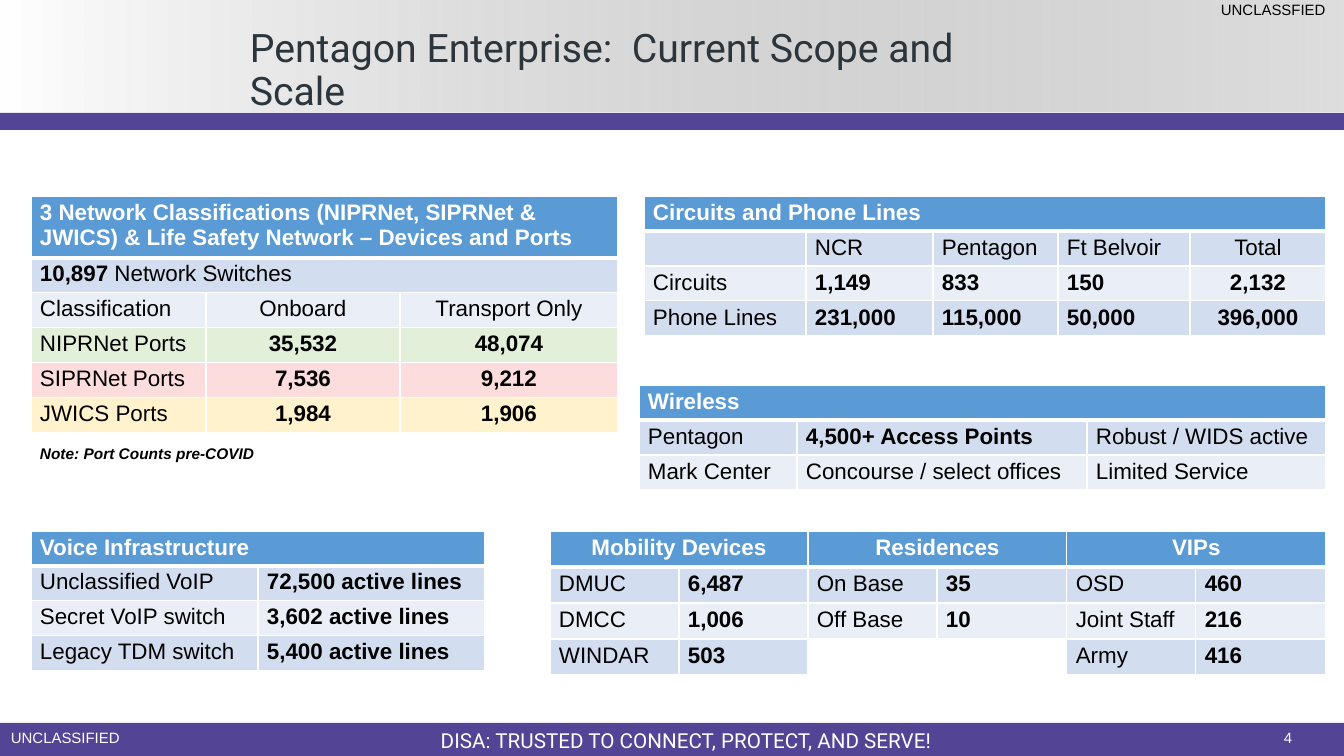
from lxml.etree import SubElement
from pptx import Presentation
from pptx.dml.color import RGBColor
from pptx.enum.shapes import MSO_SHAPE as Shape
from pptx.enum.text import MSO_ANCHOR as Anchor, PP_ALIGN as Align
from pptx.oxml.ns import qn
from pptx.util import Emu, Pt

SCALE = 914400 / 100.8
WHITE = RGBColor(0xFF, 0xFF, 0xFF)
BLACK = RGBColor(0x00, 0x00, 0x00)
GRAY = RGBColor(0x80, 0x80, 0x80)
SLATE = RGBColor(0x2B, 0x35, 0x3B)
PURPLE = RGBColor(0x54, 0x44, 0x96)
BLUE = RGBColor(0x5B, 0x9B, 0xD5)
DARK = RGBColor(0xD2, 0xDE, 0xEF)
PALE = RGBColor(0xEA, 0xEF, 0xF7)
GREEN = RGBColor(0xE2, 0xF0, 0xD9)
PINK = RGBColor(0xFC, 0xDC, 0xDC)
CREAM = RGBColor(0xFF, 0xF2, 0xCC)

deck = Presentation()
deck.slide_width, deck.slide_height = Emu(round(1344 * SCALE)), Emu(round(756 * SCALE))
slide = deck.slides.add_slide(deck.slide_layouts[6])
shapes = slide.shapes


def label(text, area, size, color, face="Arial", wrap=True):
    box = shapes.add_textbox(*[Emu(round(v * SCALE)) for v in area])
    box.text_frame.word_wrap = wrap
    para = box.text_frame.paragraphs[0]
    run = para.add_run()
    run.text = text
    font = run.font
    font.name, font.size, font.color.rgb = face, Pt(size), color
    return box.text_frame, para, font


def grid(area, widths, heights, rows, mid=(), tints={}):
    frame = shapes.add_table(len(rows), len(widths), *[Emu(round(v * SCALE)) for v in area])
    table = frame.table
    table.first_row = table.horz_banding = False
    for col, width in zip(table.columns, widths):
        col.width = Emu(round(width * SCALE))
    for row, height in zip(table.rows, heights):
        row.height = Emu(round(height * SCALE))
    for r, row in enumerate(rows):
        band = BLUE if r == 0 else tints.get(r, DARK if r % 2 else PALE)
        for c, text in enumerate(row):
            cell = table.cell(r, c)
            cell.margin_left = cell.margin_right = Emu(round(9 * SCALE))
            cell.margin_top = cell.margin_bottom = Emu(round(4 * SCALE))
            props = cell._tc.get_or_add_tcPr()
            for side in "LRTB":
                thick = (r, side) in ((0, "B"), (1, "T"))
                line = SubElement(props, qn("a:ln" + side), w=str(Pt(3 if thick else 1)))
                paint = SubElement(line, qn("a:solidFill"))
                SubElement(paint, qn("a:srgbClr"), val=str(WHITE))
            cell.fill.solid()
            cell.fill.fore_color.rgb = tints.get((r, c), band)
            para = cell.text_frame.paragraphs[0]
            if not text:
                SubElement(para._p, qn("a:endParaRPr"), sz="1600")
                continue
            if c in mid or (r, c) in mid:
                para.alignment = Align.CENTER
            for part in text.split("|"):
                run = para.add_run()
                run.text = part
                font = run.font
                font.name, font.size = "Arial", Pt(16)
                font.bold = r == 0 or part[0].isdigit()
                font.color.rgb = WHITE if r == 0 else BLACK
            
        start = 0
        for c in range(1, len(row) + 1):
            if c == len(row) or row[c] is not None:
                if c - start > 1:
                    table.cell(r, start).merge(table.cell(r, c - 1))
                start = c


for top, height, color in ((723, 34, PURPLE), (0, 112, None), (113, 17, PURPLE)):
    bar = shapes.add_shape(Shape.RECTANGLE, 0, Emu(round(top * SCALE)),
                           deck.slide_width, Emu(round(height * SCALE)))
    bar.shadow.inherit = False
    bar.line.fill.background()
    if color:
        bar.fill.solid()
        bar.fill.fore_color.rgb = color
    else:
        bar.fill.gradient()
        bar.fill.gradient_angle = 0
        for stop, tone in zip(bar.fill.gradient_stops, (WHITE, GRAY)):
            stop.color.rgb = tone
        tones = list(bar.element.iter(qn("a:srgbClr")))
        SubElement(tones[-1], qn("a:alpha"), val="26000")

label("UNCLASSIFIED", (1, 724, 396, 28), 10.7, WHITE)
label("4", (1274, 724, 38, 28), 10.7, WHITE, wrap=False)
label("UNCLASSFIED", (1211, -4, 126, 28), 10.7, BLACK, wrap=False)
body, para, font = label("DISA: TRUSTED TO CONNECT, PROTECT, AND SERVE!",
                         (86, 721, 1200, 38), 14.7, WHITE, "Roboto")
body.vertical_anchor = Anchor.MIDDLE
para.alignment = Align.CENTER
body, para, font = label("Pentagon Enterprise:  Current Scope and Scale",
                         (240, 24, 742, 85), 28, SLATE, "Roboto")
para.line_spacing = 0.9

grid((550, 531, 776, 144), [129, 129, 129, 130, 129, 130], [36] * 4, [
    ["Mobility Devices", None, "Residences", None, "VIPs", None],
    ["DMUC", "6,487", "On Base", "35", "OSD", "460"],
    ["DMCC", "1,006", "Off Base", "10", "Joint Staff", "216"],
    ["WINDAR", "503", "", None, "Army", "416"],
], mid=[(0, 0), (0, 2), (0, 4)], tints={(3, 2): WHITE, (3, 3): WHITE})

grid((31, 531, 454, 136), [227, 227], [34] * 4, [
    ["Voice Infrastructure", None],
    ["Unclassified VoIP", "72,500 active lines"],
    ["Secret VoIP switch", "3,602 active lines"],
    ["Legacy TDM switch", "5,400 active lines"],
])

grid((644, 196, 682, 140), [162, 127, 125, 132, 136], [35] * 4, [
    ["Circuits and Phone Lines", None, None, None, None],
    ["", "NCR", "Pentagon", "Ft Belvoir", "Total"],
    ["Circuits", "1,149", "833", "150", "2,132"],
    ["Phone Lines", "231,000", "115,000", "50,000", "396,000"],
], mid=[4])

grid((31, 196, 587, 235), [175, 194, 218], [60] + [35] * 5, [
    ["3 Network Classifications (NIPRNet, SIPRNet & JWICS) & Life Safety Network – Devices and Ports",
     None, None],
    ["10,897| Network Switches", None, None],
    ["Classification", "Onboard", "Transport Only"],
    ["NIPRNet Ports", "35,532", "48,074"],
    ["SIPRNet Ports", "7,536", "9,212"],
    ["JWICS Ports", "1,984", "1,906"],
], mid=[1, 2], tints={3: GREEN, 4: PINK, 5: CREAM})

grid((639, 385, 687, 105), [158, 290, 239], [35] * 3, [
    ["Wireless", None, None],
    ["Pentagon", "4,500+ Access Points", "Robust / WIDS active"],
    ["Mark Center", "Concourse / select offices", "Limited Service"],
])

body, para, font = label("Note: Port Counts pre-COVID", (30, 439, 236, 29), 11, BLACK, wrap=False)
font.bold = font.italic = True

deck.save("out.pptx")
